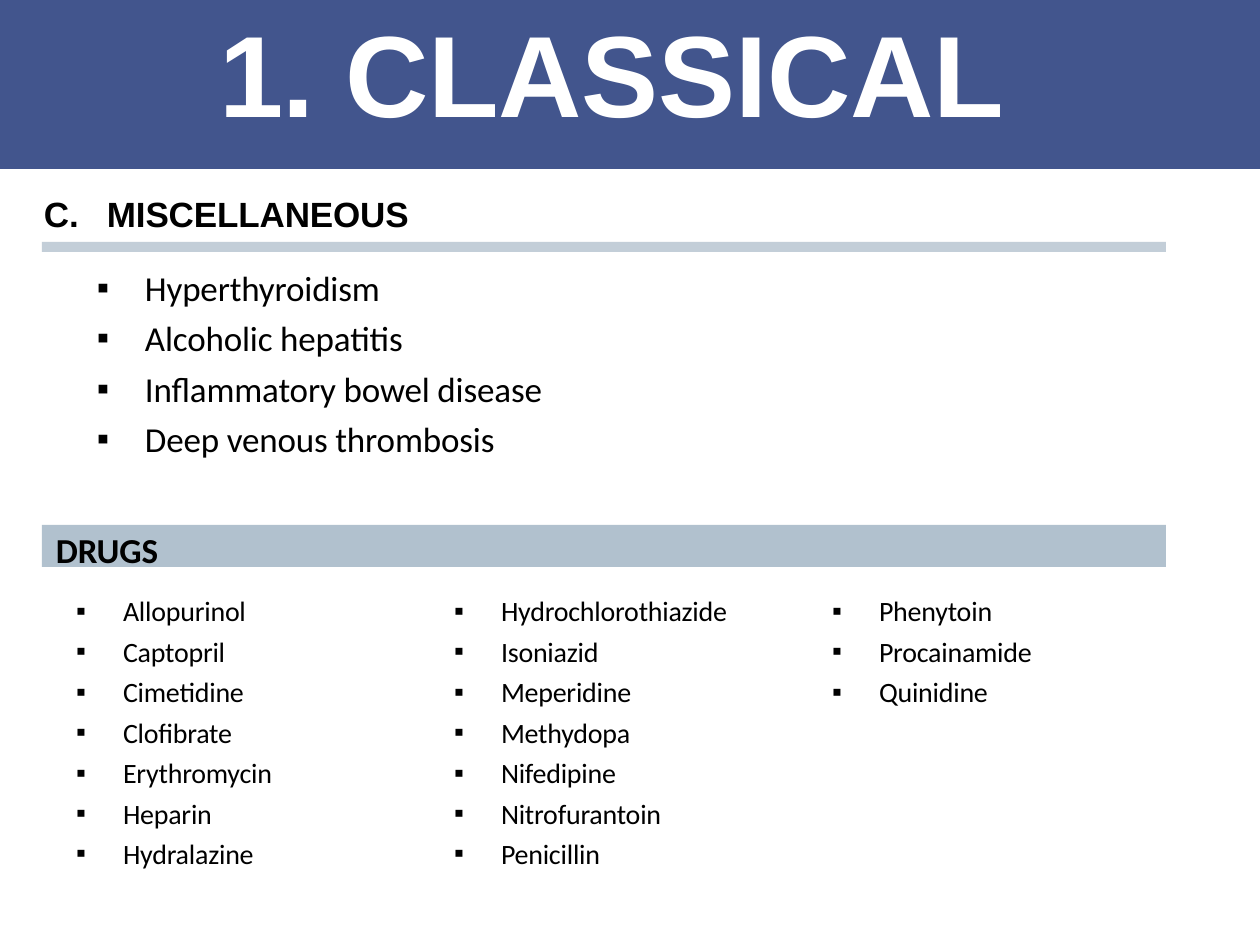
from lxml import etree
from pptx import Presentation
from pptx import util as u
from pptx.dml.color import RGBColor
from pptx.enum import shapes, text
from pptx.oxml.ns import qn

COLORS = {"banner": "42558D", "rule": "7D96AC", "drugs": "B1C1CE",
          "ink": "000000", "paper": "FFFFFF"}
CONDITIONS = ["Hyperthyroidism", "Alcoholic hepatitis",
              "Inflammatory bowel disease", "Deep venous thrombosis"]
DRUGS = [
    ["Allopurinol", "Captopril", "Cimetidine", "Clofibrate",
     "Erythromycin", "Heparin", "Hydralazine"],
    ["Hydrochlorothiazide", "Isoniazid", "Meperidine", "Methydopa",
     "Nifedipine", "Nitrofurantoin", "Penicillin"],
    ["Phenytoin", "Procainamide", "Quinidine"],
]


def px(length):
    """Turn whole pixels into EMU."""
    return u.Emu(round(length * 914400 / 126))


def add_band(page, box, color, alpha=None):
    """Place a flat filled rectangle in the box."""
    band = page.shapes.add_shape(shapes.MSO_SHAPE.RECTANGLE, *map(px, box))
    band.shadow.inherit = False
    band.line.fill.background()
    band.fill.solid()
    band.fill.fore_color.rgb = RGBColor.from_string(COLORS[color])
    if alpha:
        tint = band.fill._xPr.find(".//" + qn("a:srgbClr"))
        etree.SubElement(tint, qn("a:alpha"), val=str(alpha * 1000))
    return band


def prepare_frame(frame, top_inset):
    """Set insets, wrapping and top anchoring of a text frame."""
    frame.margin_left = frame.margin_right = frame.margin_bottom = 0
    frame.margin_top = px(top_inset)
    frame.word_wrap = True
    frame.auto_size = text.MSO_AUTO_SIZE.NONE
    frame.vertical_anchor = text.MSO_ANCHOR.TOP


def write_para(para, words, size, font="Calibri", color="ink", bold=False,
               before=0, left=0, hang=0, bullet=False, tab=None):
    """Write one paragraph with its indent, bullet, tab stop and font."""
    para.add_run().text = words
    para.alignment = text.PP_ALIGN.LEFT
    para.space_before = u.Pt(before)
    props = para._p.get_or_add_pPr()
    props.set("marL", str(px(left)))
    props.set("indent", str(px(-hang)))
    if bullet:
        etree.SubElement(props, qn("a:buFont"), typeface="Arial")
        etree.SubElement(props, qn("a:buChar"), char="▪")
    else:
        etree.SubElement(props, qn("a:buNone"))
    if tab:
        stops = etree.SubElement(props, qn("a:tabLst"))
        etree.SubElement(stops, qn("a:tab"), pos=str(px(tab)), algn="l")
    para.font.size = u.Pt(size)
    para.font.name = font
    para.font.bold = bold
    para.font.color.rgb = RGBColor.from_string(COLORS[color])
    props.find(qn("a:defRPr")).set("spc", "-10")


def add_header(page, box):
    """Place the banner and the title inside it."""
    left, top, width, height = box
    banner = add_band(page, box, "banner")
    page.shapes._spTree.insert(2, banner._element)
    title = page.shapes.title
    title.left, title.top = px(left + 218), px(top + 1)
    title.width, title.height = px(width - 435), px(height - 27)
    prepare_frame(title.text_frame, 1)
    write_para(title.text_frame.paragraphs[0], "1.\tCLASSICAL", 66, "Arial",
               "paper", True, before=1, left=1, tab=163)


def add_conditions(page, box):
    """Place the rule, the drugs band and the text that runs over both."""
    left, top, width, height = box
    add_band(page, (left, top + 50, width, 10), "rule", 46)
    add_band(page, (left, top + 333, width, 42), "drugs")
    frame = page.shapes.add_textbox(
        px(left + 1), px(top), px(504), px(height)).text_frame
    prepare_frame(frame, 1)
    write_para(frame.paragraphs[0], "C.\tMISCELLANEOUS", 20, "Arial",
               bold=True, before=1.1, left=1, tab=55)
    for index, condition in enumerate(CONDITIONS):
        write_para(frame.add_paragraph(), condition, 20,
                   before=4.8 if index else 17.9,
                   left=102, hang=48, bullet=True)
    write_para(frame.add_paragraph(), "DRUGS", 20, bold=True,
               before=39.6, left=13)


def add_drug_columns(page, box):
    """Place the drug lists in equal columns across the box."""
    left, top, width, height = box
    pitch = width // len(DRUGS)
    for column, drugs in enumerate(DRUGS):
        frame = page.shapes.add_textbox(
            px(left + column * pitch), px(top), px(281),
            px(height * len(drugs) // 7)).text_frame
        prepare_frame(frame, 9)
        for index, drug in enumerate(drugs):
            para = frame.add_paragraph() if index else frame.paragraphs[0]
            write_para(para, drug, 16, before=3.9 if index else 4.8,
                       left=49, hang=47, bullet=True)


def main():
    """Build and save the deck."""
    deck = Presentation()
    deck.slide_width, deck.slide_height = px(1260), px(945)
    page = deck.slides.add_slide(deck.slide_layouts[5])
    page.background.fill.solid()
    page.background.fill.fore_color.rgb = RGBColor.from_string(COLORS["paper"])
    add_header(page, (0, 0, 1260, 169))
    add_conditions(page, (42, 192, 1124, 382))
    add_drug_columns(page, (74, 585, 1134, 286))
    deck.save("out.pptx")


if __name__ == "__main__":
    main()
